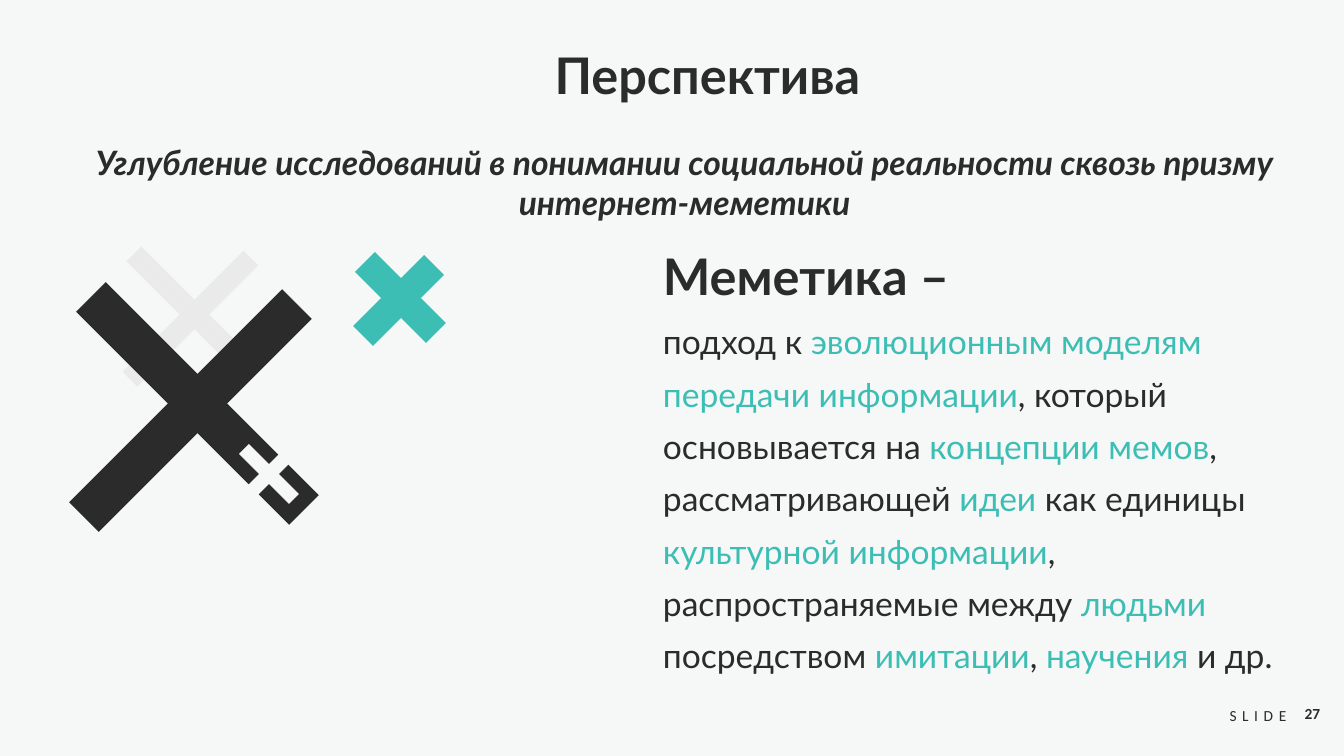
from dataclasses import dataclass

from lxml import etree
from pptx import Presentation
from pptx import util as u
from pptx.dml.color import RGBColor
from pptx.enum import shapes, text
from pptx.oxml.ns import qn
from pptx.shapes.base import BaseShape
from pptx.slide import Slide

PX = 12192000 / 1344
COLORS = {"ground": "F6F8F8", "ink": "2B2B2B", "teal": "3CBEB4", "pale": "EAEAEA"}
LEFT, CENTER = text.PP_ALIGN.LEFT, text.PP_ALIGN.CENTER
TOP, MIDDLE = text.MSO_ANCHOR.TOP, text.MSO_ANCHOR.MIDDLE


@dataclass(frozen=True)
class Run:
    text: str
    color: str = "ink"


@dataclass(frozen=True)
class Block:
    box: tuple[int, int, int, int]
    runs: tuple[Run, ...]
    size: int
    font: str = "Lato"
    bold: bool = False
    italic: bool = False
    align: text.PP_ALIGN = CENTER
    anchor: text.MSO_ANCHOR = TOP
    wrap: bool = True
    line_spacing: float = 1.0
    tracking: int = 0


@dataclass(frozen=True)
class Cross:
    """Two diagonal bars; each is placed by the top left of its square."""
    color: str
    weight: int
    side: int
    rising: tuple[int, int]
    falling: tuple[int, int]


TITLE = Block((294, 39, 827, 72), (Run("Перспектива"),), 36, bold=True)

BLOCKS = (
    Block((1289, 691, 47, 45), (Run("27"),), 11, "Calibri", bold=True, anchor=MIDDLE),
    Block((1211, 701, 94, 29), (Run("SLIDE"),), 11, "Calibri", wrap=False, tracking=4),
    Block((59, 137, 1251, 92),
          (Run("Углубление исследований в понимании социальной реальности "
               "сквозь призму интернет-меметики"),),
          24, bold=True, italic=True),
    Block((653, 240, 466, 72), (Run("Меметика –"),), 36, bold=True, align=LEFT),
    Block((653, 304, 673, 381), (
        Run("подход к "),
        Run("эволюционным моделям передачи информации", "teal"),
        Run(", который основывается на "),
        Run("концепции мемов", "teal"),
        Run(", рассматривающей "),
        Run("идеи", "teal"),
        Run(" как единицы "),
        Run("культурной информации", "teal"),
        Run(", распространяемые между "),
        Run("людьми", "teal"),
        Run(" посредством "),
        Run("имитации", "teal"),
        Run(", "),
        Run("научения", "teal"),
        Run(" и др."),
    ), 24, align=LEFT, line_spacing=1.3),
)

CROSSES = (
    Cross("pale", 15, 121, (130, 258), (134, 254)),
    Cross("ink", 30, 213, (84, 304), (91, 297)),
    Cross("ground", 10, 50, (242, 451), (244, 449)),
    Cross("teal", 20, 71, (363, 265), (365, 262)),
)


def px(n: int) -> u.Emu:
    return u.Emu(round(n * PX))


def rgb(name: str) -> RGBColor:
    return RGBColor.from_string(COLORS[name])


def fill_text(sp: BaseShape, block: Block) -> None:
    tf = sp.text_frame
    tf.word_wrap = block.wrap
    tf.auto_size = text.MSO_AUTO_SIZE.NONE
    tf.vertical_anchor = block.anchor
    p = tf.paragraphs[0]
    p.alignment = block.align
    p.line_spacing = block.line_spacing
    for run in block.runs:
        r = p.add_run()
        r.text = run.text
        r.font.name = block.font
        r.font.size = u.Pt(block.size)
        r.font.bold = block.bold
        r.font.italic = block.italic
        r.font.color.rgb = rgb(run.color)
        if block.tracking:
            r.font._element.set("spc", str(block.tracking * 100))


def add_title(s: Slide, block: Block) -> None:
    sp = s.shapes.title
    sp.left, sp.top, sp.width, sp.height = map(px, block.box)
    fill_text(sp, block)


def add_block(s: Slide, block: Block) -> None:
    fill_text(s.shapes.add_textbox(*map(px, block.box)), block)


def add_bar(s: Slide, start: tuple[int, int], end: tuple[int, int], cross: Cross) -> None:
    bar = s.shapes.add_connector(
        shapes.MSO_CONNECTOR.STRAIGHT, *map(px, (*start, *end)))
    bar.line.color.rgb = rgb(cross.color)
    bar.line.width = u.Pt(cross.weight)
    etree.SubElement(bar._element.spPr, qn("a:effectLst"))


def add_cross(s: Slide, cross: Cross) -> None:
    x, y = cross.rising
    add_bar(s, (x + cross.side, y), (x, y + cross.side), cross)
    x, y = cross.falling
    add_bar(s, (x + cross.side, y + cross.side), (x, y), cross)


def main() -> None:
    prs = Presentation()
    prs.slide_width, prs.slide_height = px(1344), px(756)
    s = prs.slides.add_slide(prs.slide_layouts.get_by_name("Title Only"))
    s.background.fill.solid()
    s.background.fill.fore_color.rgb = rgb("ground")
    add_title(s, TITLE)
    for block in BLOCKS:
        add_block(s, block)
    for cross in CROSSES:
        add_cross(s, cross)
    prs.save("out.pptx")


if __name__ == "__main__":
    main()
